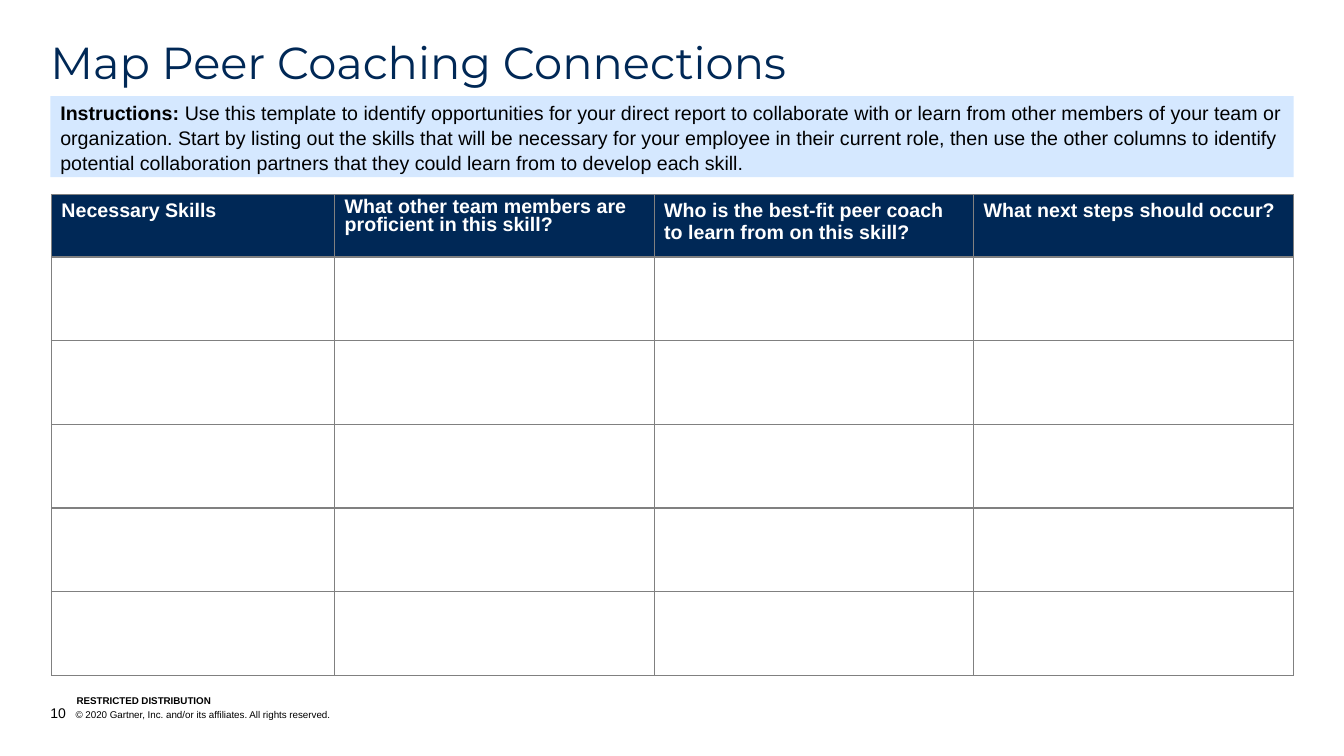
from dataclasses import dataclass

from lxml.etree import SubElement
from pptx import Presentation
from pptx.dml.color import RGBColor as RGB
from pptx.enum.shapes import MSO_SHAPE as Shape
from pptx.enum.text import MSO_ANCHOR as Anchor, MSO_AUTO_SIZE as AutoSize, PP_ALIGN as Align
from pptx.oxml.ns import qn
from pptx.util import Pt

TITLE = "Map Peer Coaching Connections"
INSTRUCTIONS = (
    ("Instructions: ", True),
    ("Use this template to identify opportunities for your direct report to collaborate "
     "with or learn from other members of your team or organization. Start by listing out "
     "the skills that will be necessary for your employee in their current role, then use "
     "the other columns to identify potential collaboration partners that they could learn "
     "from to develop each skill.", False),
)
# heading, column width, line spacing
COLUMNS = (
    ("Necessary Skills", 202.32, None),
    ("What other team members are proficient in this skill?", 228.24, Pt(13)),
    ("Who is the best-fit peer coach to learn from on this skill?", 228.24, None),
    ("What next steps should occur?", 228.24, None),
)
SKILL_ROWS = 5
PAGE_NUMBER = "10"
COPYRIGHT = "© 2020 Gartner, Inc. and/or its affiliates. All rights reserved."
DISTRIBUTION = "RESTRICTED DISTRIBUTION"


@dataclass(frozen=True)
class Theme:
    navy: str = "002856"
    pale_blue: str = "D5E8FF"
    grey: str = "808080"
    black: str = "000000"
    white: str = "FFFFFF"
    title_font: str = "Montserrat"
    body_font: str = "Arial"
    title_size: float = 32
    body_size: float = 14
    number_size: float = 10
    footer_size: float = 7


THEME = Theme()
MARGIN, CONTENT_WIDTH = 36, 888
TABLE_LEFT, TABLE_TOP = 36.72, 139
HEADER_HEIGHT, ROW_HEIGHT = 44.64, 59.76
FOOTER_TAB = 18


def add_run(paragraph, text, size, color, bold=False, font=THEME.body_font):
    run = paragraph.add_run()
    run.text = text
    run.font.name, run.font.size, run.font.bold = font, Pt(size), bold
    run.font.color.rgb = RGB.from_string(color)


def clear_margins(frame):
    frame.margin_left = frame.margin_top = frame.margin_right = frame.margin_bottom = 0


def fill_with(part, color):
    part.fill.solid()
    part.fill.fore_color.rgb = RGB.from_string(color)


def add_borders(cell):
    """Draw a thin grey line on all four sides; must run before the fill is set."""
    properties = cell._tc.get_or_add_tcPr()
    for side in ("a:lnL", "a:lnR", "a:lnT", "a:lnB"):
        line = SubElement(properties, qn(side), w=str(Pt(1)))
        SubElement(SubElement(line, qn("a:solidFill")), qn("a:srgbClr"), val=THEME.grey)


def add_title(slide):
    title = slide.shapes.title
    title.left, title.top = Pt(MARGIN), Pt(28.8)
    title.width, title.height = Pt(CONTENT_WIDTH), Pt(34.56)
    frame = title.text_frame
    clear_margins(frame)
    frame.vertical_anchor = Anchor.TOP
    frame.auto_size = AutoSize.NONE
    heading = frame.paragraphs[0]
    heading.alignment = Align.LEFT
    heading.line_spacing = 0.9
    add_run(heading, TITLE, THEME.title_size, THEME.navy, font=THEME.title_font)


def add_instructions(slide):
    banner = slide.shapes.add_shape(
        Shape.RECTANGLE, Pt(MARGIN), Pt(68.7), Pt(CONTENT_WIDTH), Pt(57.8))
    banner.shadow.inherit = False
    fill_with(banner, THEME.pale_blue)
    banner.line.fill.background()
    banner.text_frame.vertical_anchor = Anchor.MIDDLE
    paragraph = banner.text_frame.paragraphs[0]
    paragraph.alignment = Align.LEFT
    paragraph.line_spacing = 1.06
    for text, bold in INSTRUCTIONS:
        add_run(paragraph, text, THEME.body_size, THEME.black, bold)


def add_skills_table(slide):
    widths = [width for _, width, _ in COLUMNS]
    heights = [HEADER_HEIGHT] + [ROW_HEIGHT] * SKILL_ROWS
    table = slide.shapes.add_table(
        len(heights), len(widths), Pt(TABLE_LEFT), Pt(TABLE_TOP),
        Pt(sum(widths)), Pt(sum(heights))).table
    for column, width in zip(table.columns, widths):
        column.width = Pt(width)
    for index, (row, height) in enumerate(zip(table.rows, heights)):
        row.height = Pt(height)
        for cell in row.cells:
            add_borders(cell)
            fill_with(cell, THEME.white if index else THEME.navy)
    for cell, (heading, _, spacing) in zip(table.rows[0].cells, COLUMNS):
        paragraph = cell.text_frame.paragraphs[0]
        paragraph.line_spacing = spacing
        add_run(paragraph, heading, THEME.body_size, THEME.white, True)


def add_footer_line(slide, left, top, width, height):
    """Add a bottom-aligned text box and return its paragraph."""
    box = slide.shapes.add_textbox(Pt(left), Pt(top), Pt(width), Pt(height))
    frame = box.text_frame
    clear_margins(frame)
    frame.word_wrap = True
    frame.vertical_anchor = Anchor.BOTTOM
    return frame.paragraphs[0]


def add_footer(slide):
    notice = add_footer_line(slide, MARGIN, 503.3, 575.3, 12.2)
    properties = notice._p.get_or_add_pPr()
    properties.set("marL", str(Pt(FOOTER_TAB)))
    properties.set("indent", str(-Pt(FOOTER_TAB)))
    SubElement(SubElement(properties, qn("a:tabLst")), qn("a:tab"),
               pos=str(Pt(FOOTER_TAB)), algn="l")
    add_run(notice, PAGE_NUMBER, THEME.number_size, THEME.black)
    add_run(notice, "\t" + COPYRIGHT, THEME.footer_size, THEME.black)

    distribution = add_footer_line(slide, 54.7, 496.1, 182.2, 8.6)
    add_run(distribution, DISTRIBUTION, THEME.footer_size, THEME.black, True)


def main():
    deck = Presentation()
    deck.slide_width, deck.slide_height = Pt(960), Pt(540)
    slide = deck.slides.add_slide(deck.slide_layouts[5])
    add_footer(slide)
    add_title(slide)
    add_skills_table(slide)
    add_instructions(slide)
    deck.save("out.pptx")


if __name__ == "__main__":
    main()
